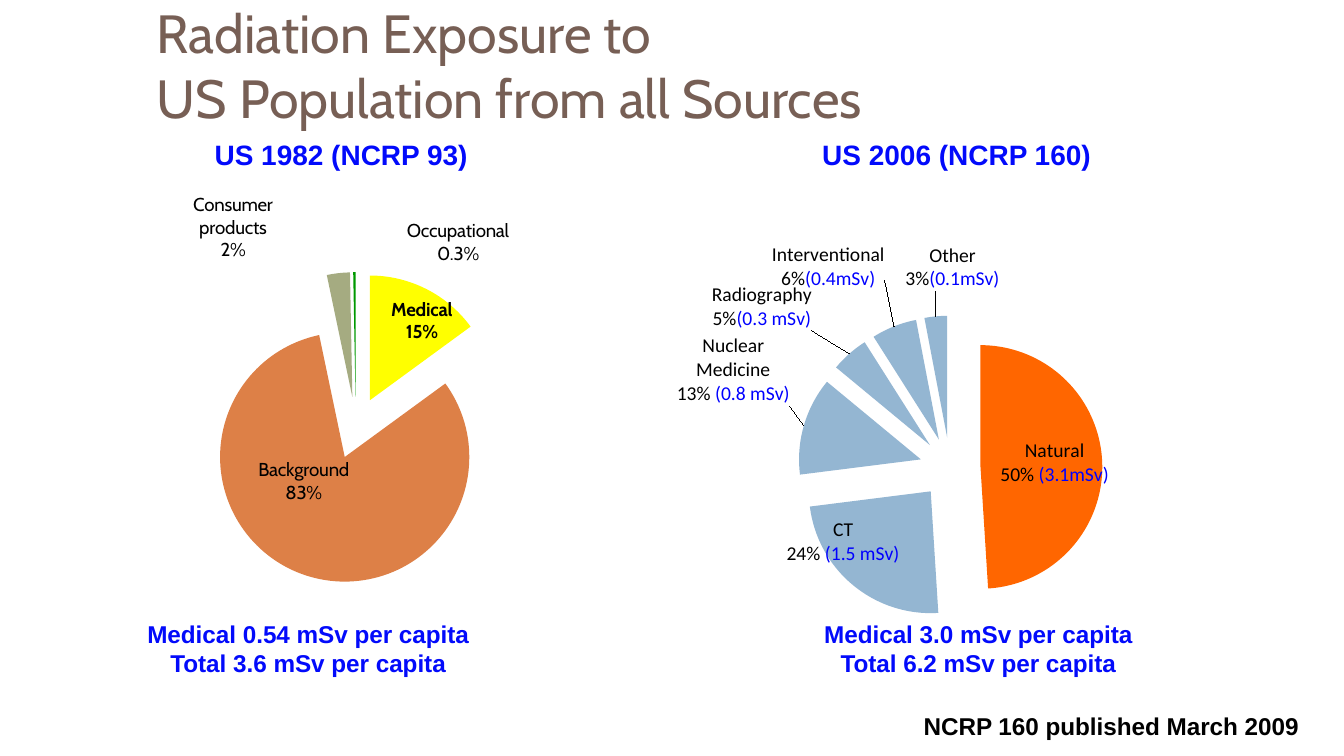
from dataclasses import dataclass

from lxml import etree
from pptx import Presentation
from pptx.chart.data import CategoryChartData
from pptx.dml.color import RGBColor
from pptx.enum import chart as ch, text as tx
from pptx.oxml import parse_xml
from pptx.util import Pt

C = "http://schemas.openxmlformats.org/drawingml/2006/chart"


@dataclass(frozen=True)
class Theme:
    title: str = "775F55"
    accent: str = "020AFB"
    dose: str = "0000FF"
    ink: str = "000000"
    medical: str = "94B6D2"
    title_size: float = 28.8
    heading_size: float = 15
    note_size: float = 13


T = Theme()
LEFT, CENTER, RIGHT = tx.PP_ALIGN.LEFT, tx.PP_ALIGN.CENTER, tx.PP_ALIGN.RIGHT


def style(font, color, **values):
    for name, value in values.items():
        setattr(font, name, value)
    font.color.rgb = RGBColor.from_string(color)


def add_text(slide, box, lines, color, size, font="Arial", bold=True,
             align=LEFT, wrap=False, anchor=tx.MSO_ANCHOR.TOP):
    sp = slide.shapes.add_textbox(*map(Pt, box))
    tf = sp.text_frame
    frame = dict(word_wrap=wrap, vertical_anchor=anchor, margin_left=Pt(6),
                 margin_right=Pt(6), margin_top=Pt(3), margin_bottom=Pt(3))
    for name, value in frame.items():
        setattr(tf, name, value)
    tf.text = "\n".join(lines)
    for p in tf.paragraphs:
        p.alignment = align
        for r in p.runs:
            style(r.font, color, name=font, size=Pt(size), bold=bold)


def manual_layout(**values):
    items = "".join(f'<c:{k} val="{v}"/>' for k, v in values.items())
    return parse_xml(f'<c:layout xmlns:c="{C}"><c:manualLayout>{items}'
                     "</c:manualLayout></c:layout>")


def place_plot(chart, x, y, w, h):
    area = chart._chartSpace.find(f".//{{{C}}}plotArea")
    for old in area.findall(f"{{{C}}}layout"):
        area.remove(old)
    area.insert(0, manual_layout(layoutTarget="inner", xMode="edge",
                                 yMode="edge", x=x, y=y, w=w, h=h))


def add_label(series, i, name, share, dose, offset, font, size, bold):
    tf = series.points[i].data_label.text_frame
    tf.text = name
    p = tf.add_paragraph()
    for part in filter(None, (share, dose)):
        p.add_run().text = part
    for p in tf.paragraphs:
        for r in p.runs:
            color = T.dose if r.text == dose else T.ink
            style(r.font, color, name=font, size=Pt(size), bold=bold)
    label = series._element.findall(f".//{{{C}}}dLbl")[i]
    label.insert(1, manual_layout(x=offset[0], y=offset[1]))


def add_pie(slide, box, plot, slices, font, size, leaders):
    data = CategoryChartData()
    data.categories = [s[0] for s in slices]
    data.add_series("Share of exposure", [s[1] for s in slices])
    chart = slide.shapes.add_chart(ch.XL_CHART_TYPE.PIE, *map(Pt, box),
                                   data).chart
    chart.has_legend = chart.has_title = False
    style(chart.font, T.ink, name=font, size=Pt(size))
    place_plot(chart, *plot)
    series = chart.plots[0].series[0]
    for i, (name, value, color, share, dose, offset, bold) in enumerate(slices):
        fill = series.points[i].format.fill
        fill.solid()
        fill.fore_color.rgb = RGBColor.from_string(color)
        add_label(series, i, name, share, dose, offset, font, size, bold)
    for lines in series._element.iter(f"{{{C}}}showLeaderLines"):
        lines.set("val", str(int(leaders)))
    for point in series._element.findall(f"{{{C}}}dPt"):
        explosion = etree.Element(f"{{{C}}}explosion", val="25")
        point.find(f"{{{C}}}spPr").addprevious(explosion)


def add_panel(slide, heading, heading_box, totals, totals_box, **pie):
    add_text(slide, heading_box, [heading], T.accent, T.heading_size)
    add_text(slide, totals_box, totals, T.accent, T.note_size, align=CENTER)
    add_pie(slide, **pie)


SLICES_1982 = [
    ("Medical", 15, "FFFF00", "15%", "", (-0.06, 0.13), True),
    ("Background", 82, "DD8047", "83%", "", (0.08, -0.26), False),
    ("Consumer products", 3, "A5AB81", "2%", "", (-0.1, -0.01), False),
    ("Occupational", 0.3, "009900", "0.3%", "", (0.16, 0), False),
]
SLICES_2006 = [
    ("Natural", 49, "FF6600", "50% ", "(3.1mSv)", (-0.17, 0), False),
    ("CT", 24, T.medical, "24% ", "(1.5 mSv)", (0.08, -0.17), False),
    ("Nuclear Medicine", 13, T.medical, "13% ", "(0.8 mSv)", (-0.01, -0.04), False),
    ("Radiography", 5, T.medical, "5%", "(0.3 mSv)", (-0.05, -0.04), False),
    ("Interventional", 6, T.medical, "6%", "(0.4mSv)", (-0.01, -0.09), False),
    ("Other", 3, T.medical, "3%", "(0.1mSv)", (0.1, -0.04), False),
]


def main():
    prs = Presentation()
    prs.slide_width, prs.slide_height = Pt(720), Pt(405)
    slide = prs.slides.add_slide(prs.slide_layouts[6])
    add_text(slide, (78, 0, 540, 69),
             ["Radiation Exposure to", "US Population from all Sources"],
             T.title, T.title_size, font="Cabin", bold=False, wrap=True,
             anchor=tx.MSO_ANCHOR.MIDDLE)
    add_panel(slide, "US 1982 (NCRP 93)", (109, 70.5, 149, 24.5),
              ["Medical 0.54 mSv per capita", "Total 3.6 mSv per capita"],
              (71.5, 328.5, 187, 37.5), box=(12, 94.5, 347, 252),
              plot=(0.32, 0.27, 0.39, 0.53), slices=SLICES_1982,
              font="Cabin", size=10, leaders=False)
    add_panel(slide, "US 2006 (NCRP 160)", (434.5, 70.5, 158, 24.5),
              ["Medical 3.0 mSv per capita", "Total 6.2 mSv per capita"],
              (434.5, 328.5, 179, 37.5), box=(336, 130.5, 346, 229),
              plot=(0.31, 0.24, 0.38, 0.57), slices=SLICES_2006,
              font="Calibri", size=10.5, leaders=True)
    add_text(slide, (466.5, 378, 235, 21.5), ["NCRP 160 published March 2009"],
             T.ink, T.note_size, align=RIGHT, wrap=True)
    prs.save("out.pptx")


if __name__ == "__main__":
    main()
